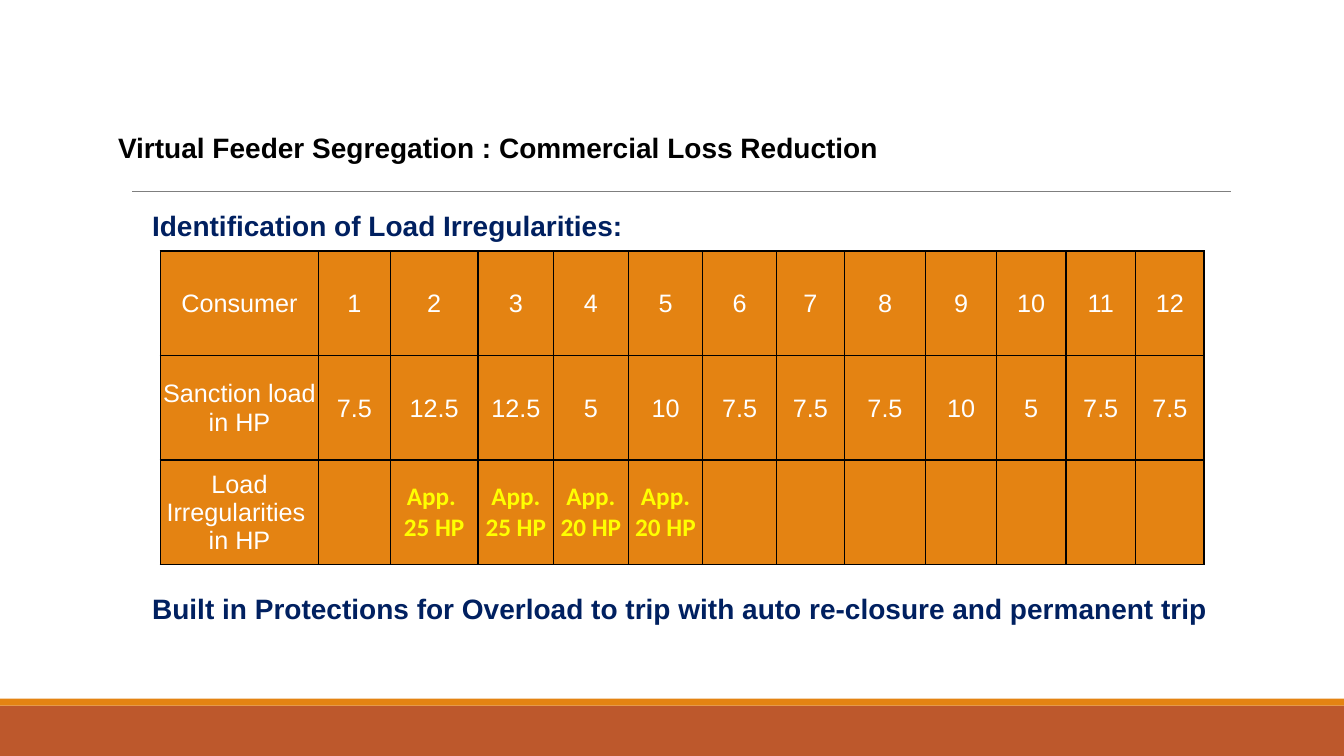
"""Build a slide on load irregularities found by virtual feeder segregation."""
import lxml.etree
import pptx
import pptx.dml.color
import pptx.enum.shapes
import pptx.enum.text
import pptx.oxml
import pptx.oxml.ns
import pptx.util

RGB = pptx.dml.color.RGBColor
ALIGN = pptx.enum.text.PP_ALIGN
ANCHOR = pptx.enum.text.MSO_ANCHOR
ORANGE = RGB(0xE4, 0x83, 0x12)
RUST = RGB(0xBD, 0x58, 0x2C)
GRAY = RGB(0x7F, 0x7F, 0x7F)
NAVY = RGB(0x00, 0x20, 0x60)
BLACK = RGB(0, 0, 0)
WHITE = RGB(0xFF, 0xFF, 0xFF)
YELLOW = RGB(0xFF, 0xFF, 0)
WIDE = pptx.util.Inches(13.33)
HIGH = pptx.util.Inches(7.5)
INSET = pptx.util.Inches(0.01)

LEFT_COLS = [11.78, 5.33, 6.53, 5.63, 5.55, 5.55, 5.48]
RIGHT_COLS = [5.03, 6.08, 5.25, 5.18, 5.18, 5.1]
LOADS = ["7.5", "12.5", "12.5", "5", "10", "7.5", "7.5", "7.5", "10", "5", "7.5", "7.5"]
FOUND = ["", "App. \n25 HP", "App. 25 HP", "App. 20 HP", "App. 20 HP"] + [""] * 7
ROWS = [
    ["Consumer"] + [str(n) for n in range(1, 13)],
    ["Sanction load in HP"] + LOADS,
    ["Load Irregularities \nin HP"] + FOUND,
]


def across(share):
    return round(WIDE * share / 100)


def down(share):
    return round(HIGH * share / 100)


def place(left, top, width, height):
    return across(left), down(top), across(width), down(height)


def write(frame, text, size=20, face="Arial", color=NAVY, bold=True, align=ALIGN.LEFT):
    frame.text = text
    for para in frame.paragraphs:
        para.alignment = align
        font = para.font
        font.size = pptx.util.Pt(size)
        font.name = face
        font.bold = bold
        font.color.rgb = color


def add_head(slide, text):
    title = slide.shapes.title
    title.left, title.top, title.width, title.height = place(8.03, 16.53, 87.17, 5.87)
    frame = title.text_frame
    frame.vertical_anchor = ANCHOR.TOP
    frame.auto_size = pptx.enum.text.MSO_AUTO_SIZE.SHAPE_TO_FIT_TEXT
    write(frame, text, color=BLACK)


def add_note(slide, text, top, width):
    frame = slide.shapes.add_textbox(*place(10.58, top, width, 5.87)).text_frame
    frame.word_wrap = False
    write(frame, text)


def add_band(slide, top, height, color):
    kind = pptx.enum.shapes.MSO_SHAPE.RECTANGLE
    band = slide.shapes.add_shape(kind, *place(0, top, 100, height))
    band.shadow.inherit = False
    band.fill.solid()
    band.fill.fore_color.rgb = color
    band.line.fill.background()


def add_rule(slide, left, right, top):
    kind = pptx.enum.shapes.MSO_CONNECTOR.STRAIGHT
    rule = slide.shapes.add_connector(kind, across(left), down(top), across(right), down(top))
    rule.line.color.rgb = GRAY
    rule.line.width = pptx.util.Pt(0.75)
    lxml.etree.SubElement(rule._element.spPr, pptx.oxml.ns.qn("a:effectLst"))


def add_edges(cell):
    props = cell._tc.get_or_add_tcPr()
    for side in "LRTB":
        props.append(pptx.oxml.parse_xml(
            f'<a:ln{side} {pptx.oxml.ns.nsdecls("a")} w="{pptx.util.Pt(1)}">'
            f'<a:solidFill><a:srgbClr val="{BLACK}"/></a:solidFill></a:ln{side}>'))


def fill_cell(cell, text):
    add_edges(cell)
    cell.fill.solid()
    cell.fill.fore_color.rgb = ORANGE
    cell.vertical_anchor = ANCHOR.MIDDLE
    cell.margin_left = cell.margin_top = cell.margin_right = INSET
    cell.margin_bottom = 0
    found = text.startswith("App.")
    write(cell.text_frame, text, size=18, face="Calibri" if found else "Arial",
          color=YELLOW if found else WHITE, bold=found, align=ALIGN.CENTER)


def add_grid(slide, left, cols, rows):
    spot = place(left, 33.2, sum(cols), 41.47)
    grid = slide.shapes.add_table(len(rows), len(cols), *spot).table
    grid.first_row = grid.horz_banding = False
    for col, width in zip(grid.columns, cols):
        col.width = across(width)
    for r, row in enumerate(rows):
        for c, text in enumerate(row):
            fill_cell(grid.cell(r, c), text)


def main():
    deck = pptx.Presentation()
    deck.slide_width, deck.slide_height = WIDE, HIGH
    slide = deck.slides.add_slide(deck.slide_layouts[5])
    add_band(slide, 93.33, 6.67, RUST)
    add_band(slide, 92.4, 0.93, ORANGE)
    add_rule(slide, 9.83, 91.6, 25.33)
    add_head(slide, "Virtual Feeder Segregation : Commercial Loss Reduction")
    split = len(LEFT_COLS)
    left = 11.93
    add_grid(slide, left, LEFT_COLS, [row[:split] for row in ROWS])
    add_grid(slide, left + sum(LEFT_COLS), RIGHT_COLS, [row[split:] for row in ROWS])
    add_note(slide, "Identification of Load Irregularities:", 26.93, 36.76)
    add_note(slide, "Built in Protections for Overload to trip with auto re-closure "
             "and permanent trip", 77.6, 81.1)
    deck.save("out.pptx")


if __name__ == "__main__":
    main()
